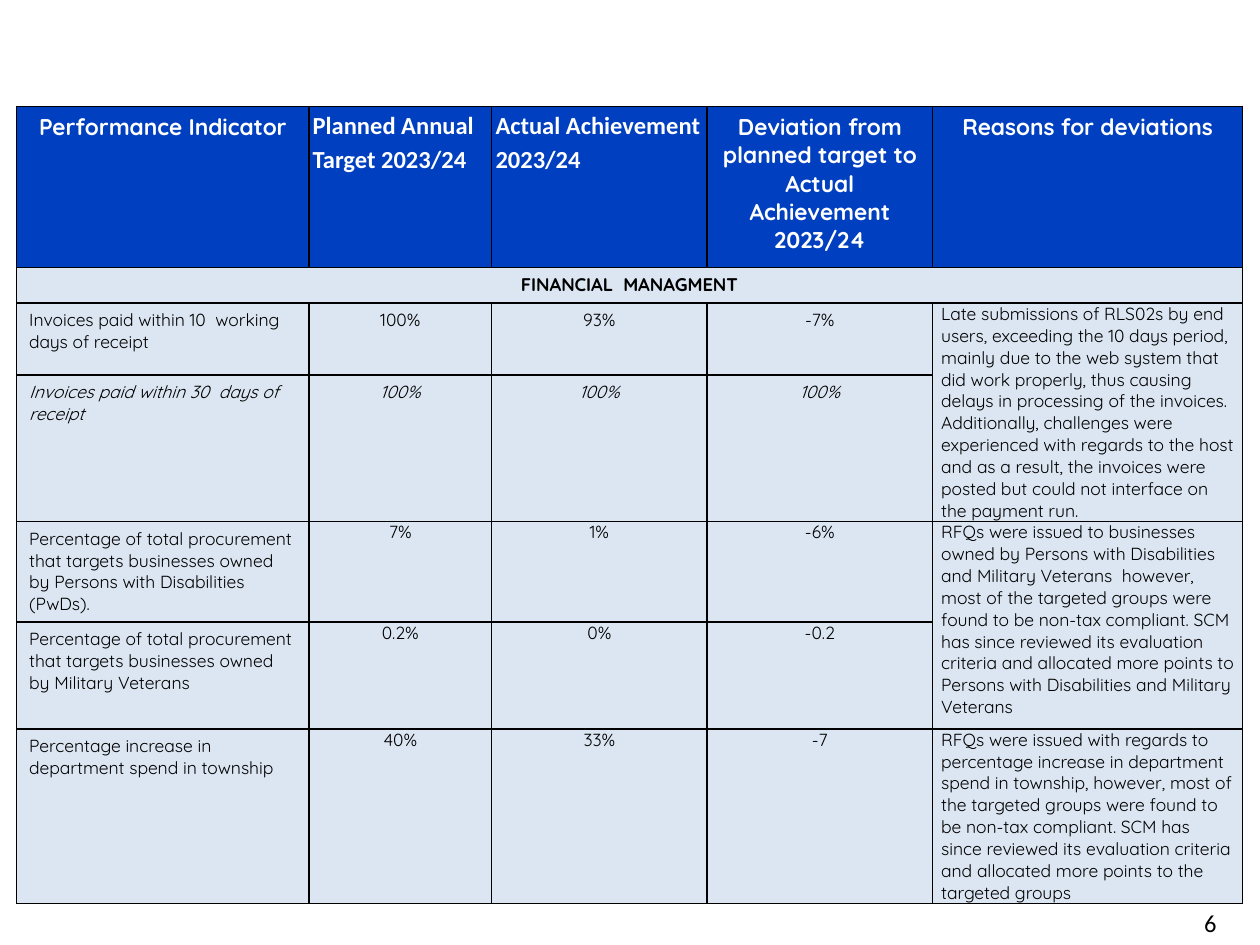
from lxml.etree import SubElement
from pptx import Presentation
from pptx.dml.color import RGBColor
from pptx.enum.text import PP_ALIGN
from pptx.oxml.ns import qn
from pptx.util import Pt

BLUE, PALE, BLACK, WHITE = "0040C0", "DCE6F2", "000000", "FFFFFF"
ROOMY, SNUG, TIGHT = (7.2, 3.6), (4.9, 0), (2.2, 0)  # side and top/bottom margins
COLUMN_WIDTHS = [167, 104.5, 123, 129, 177]
ROW_HEIGHTS = [92, 20.5, 41, 83, 57.5, 61, 99.5]

HEADINGS = [
    "Performance Indicator",
    "Planned Annual Target 2023/24",
    "Actual Achievement 2023/24",
    "Deviation from planned target to Actual Achievement 2023/24",
    "Reasons for deviations",
]
SECTION = "FINANCIAL  MANAGMENT"
INDICATORS = [
    ("Invoices paid within 10  working days of receipt", "100%", "93%", "-7%",
     "Late submissions of RLS02s by end users, exceeding the 10 days period, mainly due to "
     "the web system that did work properly, thus causing delays in processing of the "
     "invoices. Additionally, challenges were experienced with regards to the host and as a "
     "result, the invoices were posted but could not interface on the payment run."),
    ("Invoices paid within 30  days of receipt", "100%", "100%", "100%", None),
    ("Percentage of total procurement that targets businesses owned by Persons with "
     "Disabilities (PwDs).", "7%", "1%", "-6%",
     "RFQs were issued to businesses owned by Persons with Disabilities and Military "
     "Veterans  however, most of the targeted groups were found to be non-tax compliant. "
     "SCM has since reviewed its evaluation criteria and allocated more points to Persons "
     "with Disabilities and Military Veterans"),
    ("Percentage of total procurement that targets businesses owned by Military Veterans",
     "0.2%", "0%", "-0.2", None),
    ("Percentage increase in department spend in township", "40%", "33%", "-7",
     "RFQs were issued with regards to percentage increase in department spend in township, "
     "however, most of the targeted groups were found to be non-tax compliant. SCM has since "
     "reviewed its evaluation criteria and allocated more points to the targeted groups"),
]


def color(value):
    return RGBColor.from_string(value)


def style_cell(cell, fill):
    """Give the cell black one-point borders and a solid fill."""
    properties = cell._tc.get_or_add_tcPr()
    for side in ("a:lnL", "a:lnR", "a:lnT", "a:lnB"):
        line = SubElement(properties, qn(side), w=str(Pt(1)))
        paint = SubElement(line, qn("a:solidFill"))
        SubElement(paint, qn("a:srgbClr"), val=BLACK)
    cell.fill.solid()
    cell.fill.fore_color.rgb = color(fill)


def write_cell(cell, text, size, margins=ROOMY, centered=True, bold=False, italic=False,
               text_color=BLACK, font="Quicksand"):
    side, edge = margins
    cell.margin_left = cell.margin_right = Pt(side)
    cell.margin_top = cell.margin_bottom = Pt(edge)
    para = cell.text_frame.paragraphs[0]
    para.text = text
    para.alignment = PP_ALIGN.CENTER if centered else PP_ALIGN.LEFT
    for span in para.runs:
        span.font.name, span.font.size = font, Pt(size)
        span.font.bold, span.font.italic = bold, italic
        span.font.color.rgb = color(text_color)
    return para


def fill_headings(table):
    for column, heading in enumerate(HEADINGS):
        cell = table.cell(0, column)
        if column in (1, 2):
            para = write_cell(cell, heading, 14, TIGHT, False, True,
                              text_color=WHITE, font="Calibri")
            para.line_spacing, para.space_after = 1.15, Pt(8)
        else:
            write_cell(cell, heading, 13, bold=True, text_color=WHITE)


def fill_indicators(table, first_row):
    for row, (name, *values, reason) in enumerate(INDICATORS, first_row):
        italic = "30  days" in name
        is_invoice = name.startswith("Invoices")
        write_cell(table.cell(row, 0), name, 10, centered=False, italic=italic)
        for column, value in enumerate(values, 1):
            write_cell(table.cell(row, column), value, 10,
                       ROOMY if is_invoice else SNUG, italic=italic)
        if reason:
            write_cell(table.cell(row, 4), reason, 10, SNUG, centered=False)
        else:
            table.cell(row - 1, 4).merge(table.cell(row, 4))


def add_performance_table(page, left, top):
    table = page.shapes.add_table(
        len(ROW_HEIGHTS), len(COLUMN_WIDTHS), Pt(left), Pt(top),
        Pt(sum(COLUMN_WIDTHS)), Pt(sum(ROW_HEIGHTS))).table
    for column, width in zip(table.columns, COLUMN_WIDTHS):
        column.width = Pt(width)
    for index, (row, height) in enumerate(zip(table.rows, ROW_HEIGHTS)):
        row.height = Pt(height)
        for cell in row.cells:
            style_cell(cell, PALE if index else BLUE)
    fill_headings(table)
    table.cell(1, 0).merge(table.cell(1, 4))
    write_cell(table.cell(1, 0), SECTION, 10.5, bold=True)
    fill_indicators(table, 2)


def add_page_number(page, left, top, width, height):
    box = page.shapes.add_textbox(Pt(left), Pt(top), Pt(width), Pt(height))
    box.text_frame.word_wrap = True
    box.text_frame.text = "6"
    font = box.text_frame.paragraphs[0].runs[0].font
    font.name, font.size = "Calibri", Pt(14)
    font.color.rgb = color(BLACK)


def main():
    deck = Presentation()
    deck.slide_width, deck.slide_height = Pt(720), Pt(540)
    page = deck.slides.add_slide(deck.slide_layouts[6])
    add_performance_table(page, 9.5, 60.8)
    add_page_number(page, 681, 515.5, 36, 29)
    deck.save("out.pptx")


if __name__ == "__main__":
    main()
